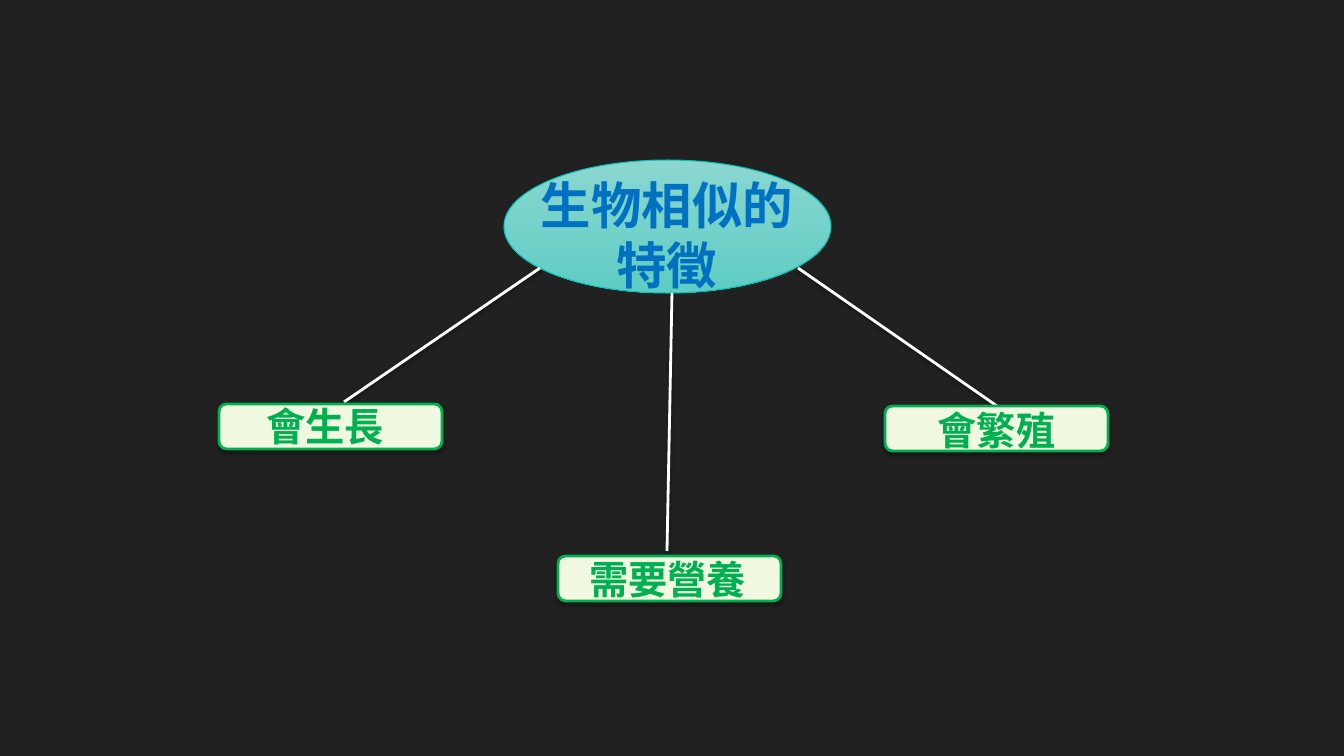
from lxml import etree
from pptx import Presentation
from pptx import util as u
from pptx.dml.color import RGBColor
from pptx.enum import shapes, text
from pptx.oxml.ns import qn


def color(code):
    return RGBColor.from_string(code)


class Board:
    FONT = "Noto Sans CJK SC"
    SCALE = 914400 / 100.8

    def __init__(self, deck, back):
        deck.slide_width, deck.slide_height = self.px(1344, 756)
        self.slide = deck.slides.add_slide(deck.slide_layouts[6])
        self.shapes = self.slide.shapes
        fill = self.slide.background.fill
        fill.solid()
        fill.fore_color.rgb = color(back)

    def px(self, *sizes):
        return [u.Emu(round(size * self.SCALE)) for size in sizes]

    def shade(self, shape, alpha, dist):
        props = shape._element.spPr
        list_tag = qn("a:effectLst")
        effects = props.find(list_tag)
        if effects is None:
            effects = etree.SubElement(props, list_tag)
        outer = etree.SubElement(
            effects, qn("a:outerShdw"), blurRad=str(u.Pt(3)),
            dist=str(u.Pt(dist)), dir="5400000", rotWithShape="0")
        tint = etree.SubElement(outer, qn("a:srgbClr"), val="000000")
        etree.SubElement(tint, qn("a:alpha"), val=str(alpha * 1000))

    def stroke(self, shape, code, width):
        shape.line.color.rgb = color(code)
        shape.line.width = u.Pt(width)

    def shape(self, kind, box, edge, width):
        shape = self.shapes.add_shape(kind, *self.px(*box))
        shape.shadow.inherit = False
        self.stroke(shape, edge, width)
        return shape

    def oval(self, box, top, base, edge):
        oval = self.shape(shapes.MSO_SHAPE.OVAL, box, edge, 0.75)
        oval.fill.gradient()
        oval.fill.gradient_angle = 270
        for stop, code, place in zip(oval.fill.gradient_stops, (top, base), (0, 1)):
            stop.color.rgb = color(code)
            stop.position = place

    def card(self, box, fill, edge):
        card = self.shape(shapes.MSO_SHAPE.ROUNDED_RECTANGLE, box, edge, 2)
        card.fill.solid()
        card.fill.fore_color.rgb = color(fill)
        self.shade(card, 35, 1.8)

    def label(self, words, box, size, code):
        frame = self.shapes.add_textbox(*self.px(*box)).text_frame
        frame.word_wrap = True
        frame.margin_left = frame.margin_right = u.Inches(0.05)
        frame.margin_top = frame.margin_bottom = u.Inches(0.05)
        frame.text = words
        para = frame.paragraphs[0]
        para.alignment = text.PP_ALIGN.CENTER
        font = para.runs[0].font
        font.size = u.Pt(size)
        font.bold = True
        font.color.rgb = color(code)
        font.name = self.FONT
        etree.SubElement(font._element, qn("a:ea"), typeface=self.FONT)

    def link(self, start, end):
        link = self.shapes.add_connector(
            shapes.MSO_CONNECTOR.STRAIGHT, *self.px(*start, *end))
        self.stroke(link, "FFFFFF", 2)
        self.shade(link, 38, 1.6)


def main():
    deck = Presentation()
    board = Board(deck, "212121")
    board.oval((504, 160, 327, 133), "8BD7D0", "5ECDC3", "00C6BB")
    board.label("生物相似的特徵", (516, 169, 302, 307), 36, "0070C0")

    traits = [
        ("會生長", (219, 404), (172, 397, 306), (540, 268), (344, 402)),
        ("需要營養", (558, 556), (552, 550, 231), (672, 293), (667, 551)),
        ("會繁殖", (885, 406), (920, 401, 153), (798, 268), (997, 406)),
    ]
    for words, spot, box, start, end in traits:
        board.link(start, end)
        board.card((*spot, 223, 45), "F0F9DF", "00B050")
        board.label(words, (*box, 57), 28, "00B050")

    deck.save("out.pptx")


if __name__ == "__main__":
    main()
